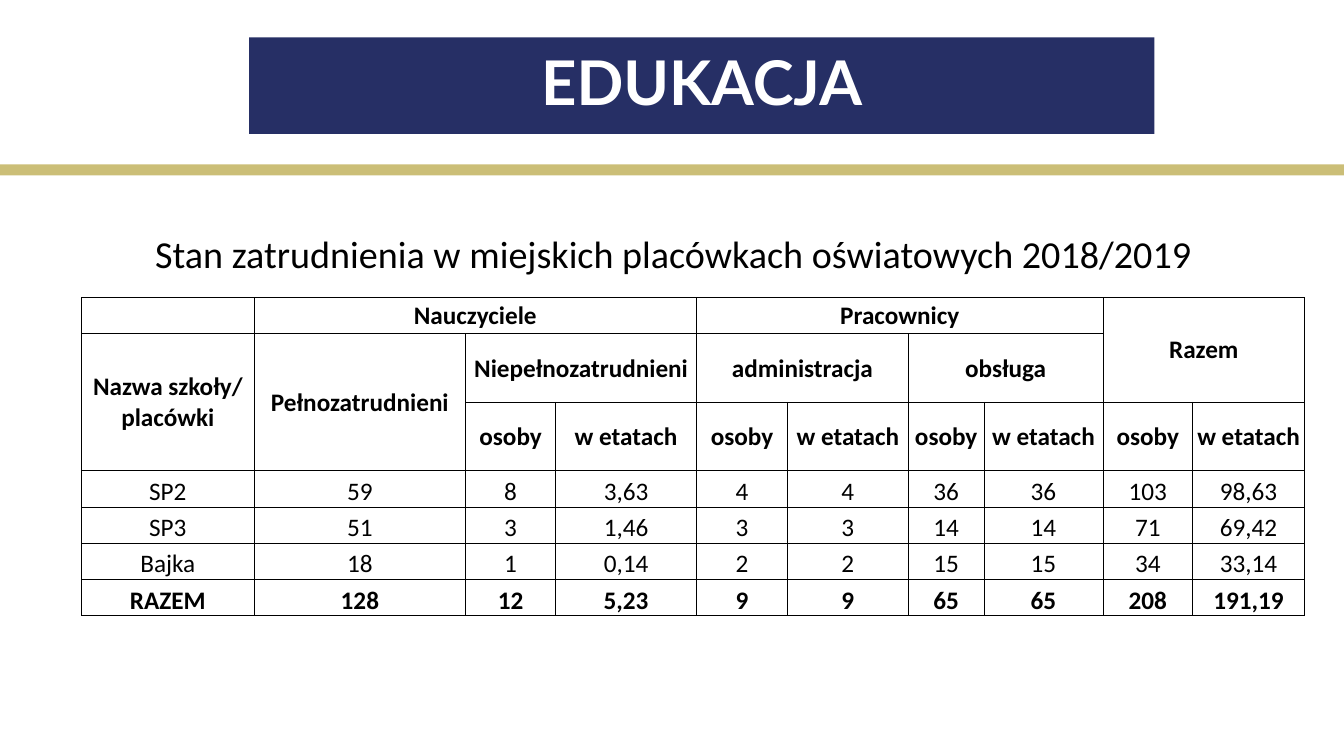
import pptx
import pptx.dml.color
import pptx.enum.shapes
import pptx.enum.text
import pptx.oxml
import pptx.oxml.ns
import pptx.util
from pptx.util import Inches

ALIGN = pptx.enum.text.PP_ALIGN
ANCHOR = pptx.enum.text.MSO_ANCHOR

COLUMNS = [1.71, 2.1, 0.89, 1.4, 0.9, 1.2, 0.75, 1.18, 0.89, 1.11]
ROWS = [0.36, 0.68, 0.68, 0.36, 0.36, 0.36, 0.36]
GROUPS = [
    (0, 1, 1, 3, "Nauczyciele"),
    (0, 4, 1, 4, "Pracownicy"),
    (0, 8, 2, 2, "Razem"),
    (1, 0, 2, 1, "Nazwa szkoły/\nplacówki"),
    (1, 1, 2, 1, "Pełnozatrudnieni"),
    (1, 2, 1, 2, "Niepełnozatrudnieni"),
    (1, 4, 1, 2, "administracja"),
    (1, 6, 1, 2, "obsługa"),
]
STAFF = [
    ["SP2", "59", "8", "3,63", "4", "4", "36", "36", "103", "98,63"],
    ["SP3", "51", "3", "1,46", "3", "3", "14", "14", "71", "69,42"],
    ["Bajka", "18", "1", "0,14", "2", "2", "15", "15", "34", "33,14"],
    ["RAZEM", "128", "12", "5,23", "9", "9", "65", "65", "208", "191,19"],
]


def rgb(value):
    return pptx.dml.color.RGBColor.from_string(value)


class SlideBuilder:
    navy, gold, white, black = "262F65", "CBBE77", "FFFFFF", "000000"
    title_font, body_font = "Lato", "Calibri"

    def __init__(self, prs):
        self.s = prs.slides.add_slide(prs.slide_layouts[6])

    def add_text(self, tf, text, size, font, color, bold=False, align=ALIGN.CENTER, spacing=None):
        for i, line in enumerate(text.split("\n")):
            p = tf.add_paragraph() if i else tf.paragraphs[0]
            p.alignment = align
            if spacing:
                p.line_spacing = spacing
            r = p.add_run()
            r.text = line
            r.font.size = pptx.util.Pt(size)
            r.font.name = font
            r.font.bold = bold
            r.font.color.rgb = rgb(color)

    def rect(self, x, y, w, h, fill):
        sp = self.s.shapes.add_shape(pptx.enum.shapes.MSO_SHAPE.RECTANGLE,
                                     Inches(x), Inches(y), Inches(w), Inches(h))
        sp.shadow.inherit = False
        sp.fill.solid()
        sp.fill.fore_color.rgb = rgb(fill)
        sp.line.fill.background()
        return sp

    def title(self, x, y, w, h, text):
        tf = self.rect(x, y, w, h, self.navy).text_frame
        tf.word_wrap = True
        tf.vertical_anchor = ANCHOR.MIDDLE
        self.add_text(tf, text, 44, self.title_font, self.white, True, spacing=0.9)

    def text(self, x, y, w, h, text):
        tf = self.s.shapes.add_textbox(Inches(x), Inches(y), Inches(w), Inches(h)).text_frame
        tf.word_wrap = True
        self.add_text(tf, text, 27.2, self.body_font, self.black, align=ALIGN.LEFT, spacing=0.8)

    def border(self, cell):
        tc_pr = cell._tc.get_or_add_tcPr()
        for i, side in enumerate(("lnL", "lnR", "lnT", "lnB")):
            tc_pr.insert(i, pptx.oxml.parse_xml(
                f'<a:{side} {pptx.oxml.ns.nsdecls("a")} w="6350"><a:solidFill>'
                f'<a:srgbClr val="{self.black}"/></a:solidFill></a:{side}>'))

    def fill_cell(self, cell, text, bold, anchor):
        cell.vertical_anchor = anchor
        self.add_text(cell.text_frame, text, 18, self.body_font, self.black, bold)

    def table(self, x, y, columns, rows, groups, staff):
        frame = self.s.shapes.add_table(len(rows), len(columns), Inches(x), Inches(y),
                                        Inches(sum(columns)), Inches(sum(rows)))
        table = frame.table
        table.first_row = table.horz_banding = False
        for column, width in zip(table.columns, columns):
            column.width = Inches(width)
        for row, height in zip(table.rows, rows):
            row.height = Inches(height)
        for cell in table.iter_cells():
            cell.margin_left = cell.margin_right = cell.margin_top = Inches(0.01)
            cell.margin_bottom = 0
            cell.fill.background()
            self.border(cell)
            cell.text_frame.paragraphs[0].font.size = pptx.util.Pt(18)
        for row, col, height, width, text in groups:
            cell = table.cell(row, col)
            cell.merge(table.cell(row + height - 1, col + width - 1))
            self.fill_cell(cell, text, True, ANCHOR.MIDDLE)
        for col in range(2, len(columns)):
            self.fill_cell(table.cell(2, col), ("osoby", "w etatach")[col % 2], True, ANCHOR.MIDDLE)
        for row, values in enumerate(staff, 3):
            for col, value in enumerate(values):
                self.fill_cell(table.cell(row, col), value, values[0] == "RAZEM", ANCHOR.BOTTOM)


def main():
    prs = pptx.Presentation()
    prs.slide_width, prs.slide_height = Inches(13.33), Inches(7.5)
    slide = SlideBuilder(prs)
    slide.rect(0, 1.63, 13.33, 0.11, slide.gold)
    slide.title(2.47, 0.37, 8.98, 0.96, "EDUKACJA")
    slide.text(1.44, 2.32, 10.78, 0.53,
               "Stan zatrudnienia w miejskich placówkach oświatowych 2018/2019")
    slide.table(0.81, 2.95, COLUMNS, ROWS, GROUPS, STAFF)
    prs.save("out.pptx")


if __name__ == "__main__":
    main()
